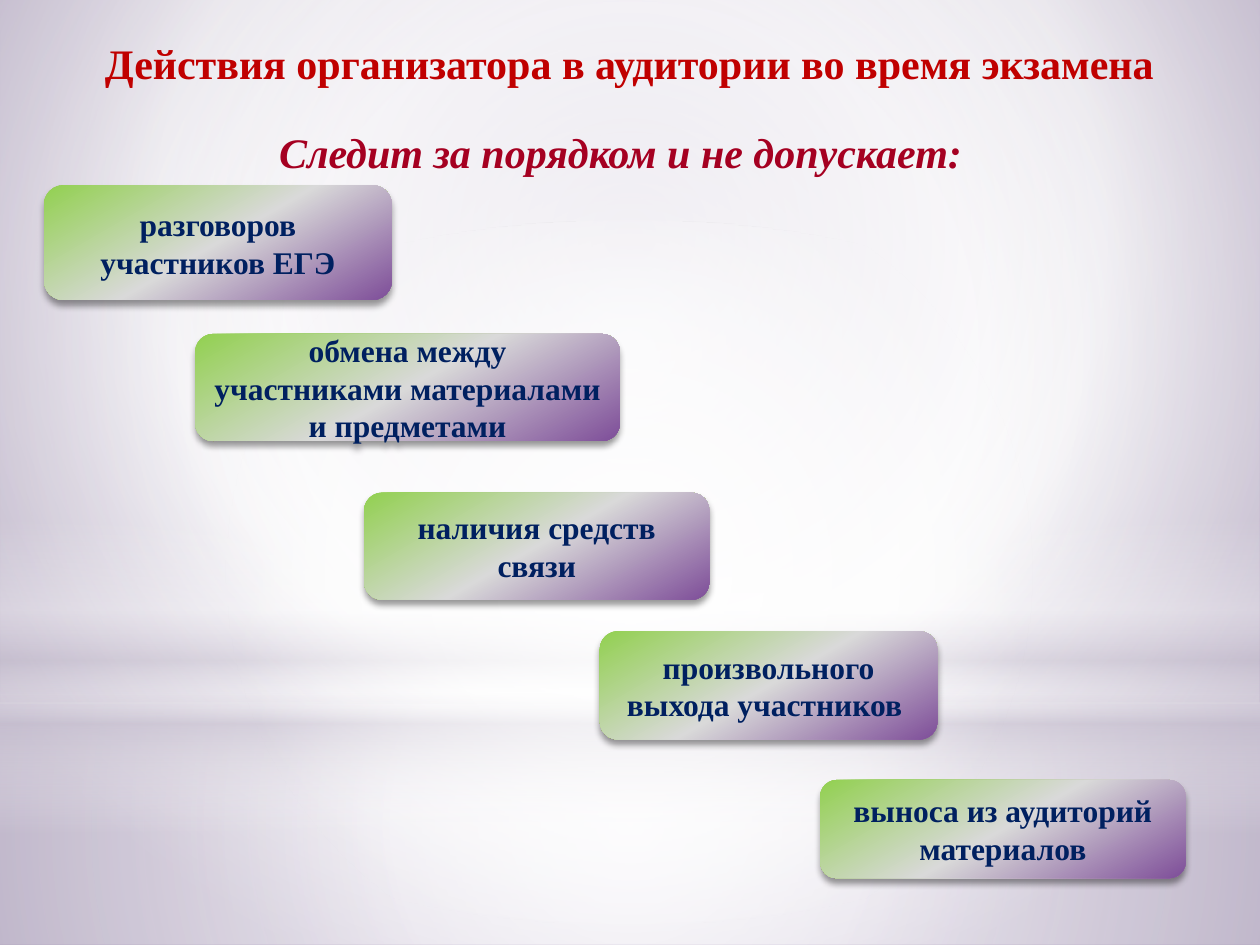
import pptx
import pptx.util
import pptx.dml.color
import pptx.enum.shapes
import pptx.enum.text
import pptx.oxml
import pptx.oxml.ns
import lxml.etree

RGB = pptx.dml.color.RGBColor
SHAPE = pptx.enum.shapes.MSO_SHAPE
ANCHOR = pptx.enum.text.MSO_ANCHOR
Inches, Pt = pptx.util.Inches, pptx.util.Pt
qn = pptx.oxml.ns.qn

FONT = "Times New Roman"
WHITE = RGB(0xFF, 0xFF, 0xFF)
HAZE = RGB(0xC9, 0xC2, 0xD1)
LILAC = RGB(0xC1, 0xB7, 0xCD)
MAUVE = RGB(0xA1, 0x91, 0xB5)
GREEN = RGB(0x92, 0xD0, 0x50)
GREY = RGB(0xD9, 0xD9, 0xD9)
PURPLE = RGB(0x7E, 0x4E, 0x99)
PALE_PURPLE = RGB(0xBF, 0xA3, 0xD0)
RED = RGB(0xC0, 0x00, 0x00)
CRIMSON = RGB(0xA5, 0x00, 0x21)
NAVY = RGB(0x00, 0x20, 0x60)

WIDTH, HEIGHT = 10, 7.5
CENTRE = (50, 50, 50, 50)

# Gradient stops: position %, colour, opacity %
BACKDROP = [(0, LILAC, 100), (60, WHITE, 100), (100, MAUVE, 100)]
CARD = [(0, GREEN, 100), (50, GREY, 100), (100, PURPLE, 100), (100, PALE_PURPLE, 100)]

# Preset, top, height, stops, direction (an angle or a focus rectangle)
LIGHT_LAYERS = [
    (SHAPE.RECTANGLE, 5.58, 1.92,
     [(0, WHITE, 91), (37, WHITE, 76), (100, HAZE, 79)], CENTRE),
    (SHAPE.RECTANGLE, 0, 5.58,
     [(0, WHITE, 89), (48, WHITE, 62), (100, HAZE, 79)], CENTRE),
    (SHAPE.RECTANGLE, 4.12, 2.5,
     [(0, WHITE, 0), (29, WHITE, 30), (45, HAZE, 40), (55, WHITE, 26),
      (65, HAZE, 60), (100, WHITE, 0)], 90),
    (SHAPE.OVAL, 1.75, 5.58, [(0, WHITE, 100), (56, WHITE, 0)], CENTRE),
]

# Text, box, colour, italic, top inset
HEADINGS = [
    ("Действия организатора в аудитории во время экзамена",
     (0.35, 0.21, 9.29, 0.63), RED, False, 0.09),
    ("Следит за порядком и не допускает:",
     (0.12, 0.92, 9.61, 6.01), CRIMSON, True, 0.08),
]

PROHIBITIONS = [
    ("разговоров участников ЕГЭ", (0.35, 1.47, 2.76, 0.91)),
    ("обмена между участниками материалами и предметами", (1.55, 2.65, 3.37, 0.85)),
    ("наличия средств связи", (2.89, 3.91, 2.74, 0.85)),
    ("произвольного выхода участников ", (4.76, 5.01, 2.68, 0.86)),
    ("выноса из аудиторий материалов", (6.51, 6.19, 2.9, 0.78)),
]


def add_child(parent, tag, **attributes):
    child = lxml.etree.SubElement(parent, qn(tag))
    for key, value in attributes.items():
        child.set(key, str(value))
    return child


def add_colour(parent, colour, opacity):
    node = add_child(parent, "a:srgbClr", val=colour)
    if opacity < 100:
        add_child(node, "a:alpha", val=opacity * 1000)


def set_gradient(fill, holder, stops, direction):
    """Swap the fill held in `holder` for a linear or circular gradient."""
    fill.solid()
    solid = holder.find(qn("a:solidFill"))
    gradient = pptx.oxml.parse_xml(
        f'<a:gradFill {pptx.oxml.ns.nsdecls("a")} rotWithShape="1"/>')
    stop_list = add_child(gradient, "a:gsLst")
    for position, colour, opacity in stops:
        add_colour(add_child(stop_list, "a:gs", pos=position * 1000), colour, opacity)
    if isinstance(direction, tuple):
        circle = add_child(gradient, "a:path", path="circle")
        edges = {edge: share * 1000 for edge, share in zip("ltrb", direction)}
        add_child(circle, "a:fillToRect", **edges)
    else:
        add_child(gradient, "a:lin", ang=direction * 60000, scaled=0)
    holder.replace(solid, gradient)


def add_gradient_shape(slide, preset, box, stops, direction):
    shape = slide.shapes.add_shape(preset, *map(Inches, box))
    shape.shadow.inherit = False
    shape.line.fill.background()
    set_gradient(shape.fill, shape.element.spPr, stops, direction)
    return shape


def add_drop_shadow(shape):
    effects = shape.element.spPr.find(qn("a:effectLst"))
    shadow = add_child(effects, "a:outerShdw", blurRad=Pt(4), dist=Pt(3),
                       dir=90 * 60000, rotWithShape=0)
    add_colour(shadow, RGB(0, 0, 0), 40)


def write(frame, text, size, colour, italic=False, anchor=ANCHOR.MIDDLE):
    frame.word_wrap = True
    frame.vertical_anchor = anchor
    paragraph = frame.paragraphs[0]
    paragraph.alignment = pptx.enum.text.PP_ALIGN.CENTER
    run = paragraph.add_run()
    run.text = text
    run.font.name, run.font.size = FONT, Pt(size)
    run.font.bold, run.font.italic = True, italic
    run.font.color.rgb = colour


def main():
    deck = pptx.Presentation()
    deck.slide_width, deck.slide_height = Inches(WIDTH), Inches(HEIGHT)
    slide = deck.slides.add_slide(deck.slide_layouts[6])

    fill = slide.background.fill
    fill.solid()
    holder = slide.element.find(".//" + qn("p:bgPr"))
    set_gradient(fill, holder, BACKDROP, (20, 10, 20, 60))

    for preset, top, height, stops, direction in LIGHT_LAYERS:
        add_gradient_shape(slide, preset, (0, top, WIDTH, height), stops, direction)

    for text, box, colour, italic, inset in HEADINGS:
        frame = slide.shapes.add_textbox(*map(Inches, box)).text_frame
        frame.margin_top = Inches(inset)
        write(frame, text, 24, colour, italic, ANCHOR.TOP)

    for text, box in PROHIBITIONS:
        card = add_gradient_shape(slide, SHAPE.ROUNDED_RECTANGLE, box, CARD, 60)
        add_drop_shadow(card)
        write(card.text_frame, text, 18, NAVY)

    deck.save("out.pptx")


if __name__ == "__main__":
    main()
